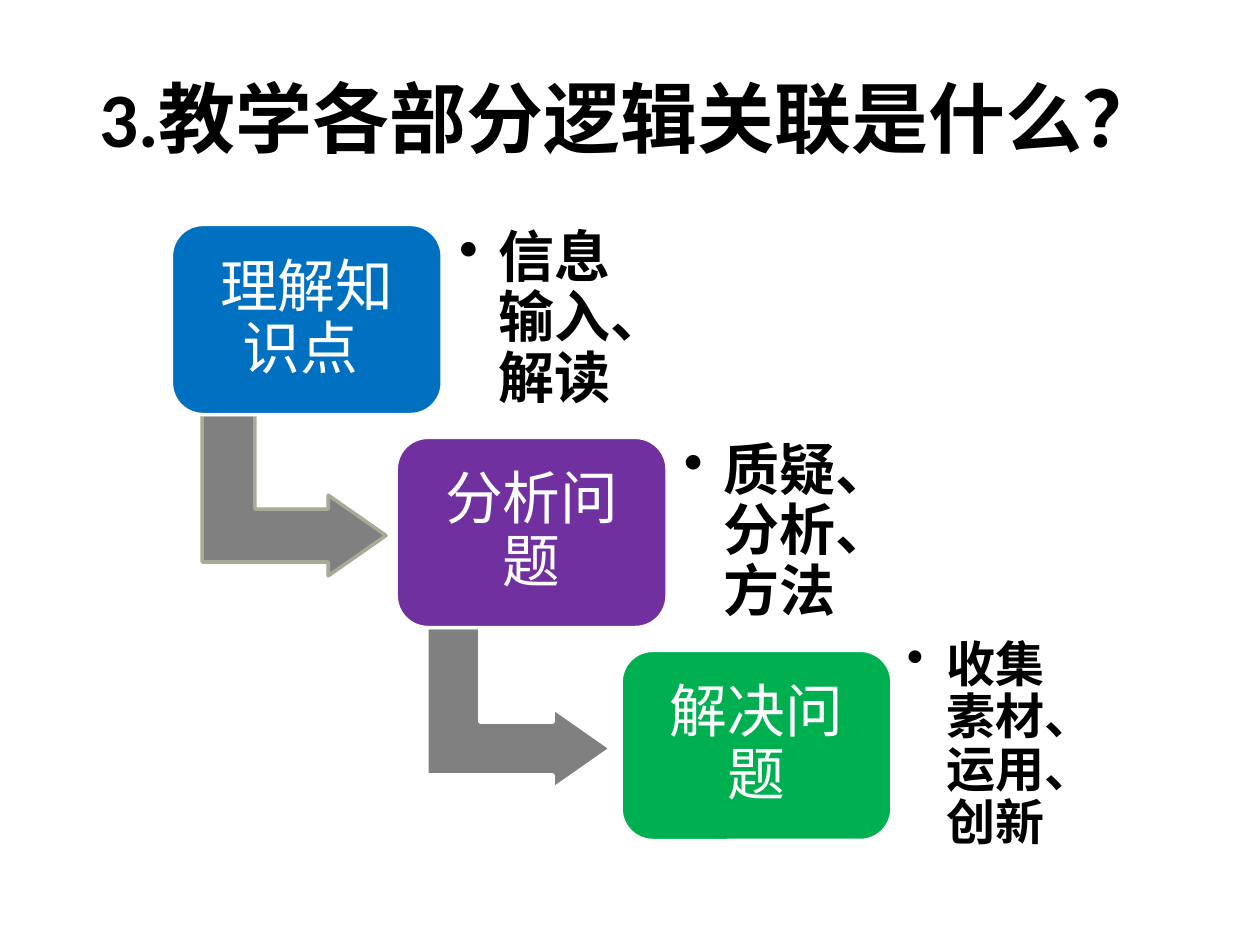
from dataclasses import dataclass

from lxml import etree
from pptx import Presentation
from pptx.dml.color import RGBColor
from pptx.enum.shapes import MSO_SHAPE
from pptx.enum.text import MSO_ANCHOR, PP_ALIGN
from pptx.oxml.ns import qn
from pptx.util import Pt

ROUNDED = MSO_SHAPE.ROUNDED_RECTANGLE
BENT_ARROW = MSO_SHAPE.BENT_UP_ARROW
MIDDLE = MSO_ANCHOR.MIDDLE
CENTER, LEFT = PP_ALIGN.CENTER, PP_ALIGN.LEFT

FONT = "Calibri"
COLORS = {
    "black": "000000",
    "white": "FFFFFF",
    "blue": "0070C0",
    "purple": "7030A0",
    "green": "00B050",
    "arrow": "808080",
    "arrow_edge": "A7AA95",
}

# Staircase geometry, in points
FIRST_X, FIRST_Y = 97.9, 128.2
STEP_X, STEP_Y = 128.5, 121.7
BOX_W, BOX_H = 154.8, 108.7
DETAIL_DY, DETAIL_W, DETAIL_H = 10.5, 113, 87.8
ARROW_DX, ARROW_DY, ARROW_W, ARROW_H = 24, 102.2, 92.2, 105.1
INDENT = 22.5


@dataclass
class Step:
    title: str
    color: str
    detail: str
    detail_size: float
    detail_margin: float
    arrow_edge: str = ""  # empty: no arrow to a next step


STEPS = [
    Step("理解知识点 ", "blue", "信息输入、解读", 32, 9.6, "arrow_edge"),
    Step("分析问题", "purple", "质疑、分析、方法", 32, 9.6, "white"),
    Step("解决问题", "green", "收集素材、运用、创新", 28, 8.5),
]


def rgb(name: str) -> RGBColor:
    return RGBColor.from_string(COLORS[name])


def set_text(s, text: str, size: float, color: str, bold: bool, align,
             margin: float, spacing: float = 0.9):
    """Fill a shape with one vertically centred paragraph and return it."""
    tf = s.text_frame
    tf.text = text
    tf.word_wrap = True
    tf.vertical_anchor = MIDDLE
    tf.margin_left = tf.margin_right = Pt(margin)
    tf.margin_top = tf.margin_bottom = Pt(margin)
    p = tf.paragraphs[0]
    p.alignment = align
    p.line_spacing = spacing
    r = p.runs[0]
    r.font.name = FONT
    r.font.size = Pt(size)
    r.font.bold = bold
    r.font.color.rgb = rgb(color)
    return p


def add_block(slide, kind, x: float, y: float, w: float, h: float,
              fill: str, edge: str):
    s = slide.shapes.add_shape(kind, Pt(x), Pt(y), Pt(w), Pt(h))
    s.shadow.inherit = False
    s.fill.solid()
    s.fill.fore_color.rgb = rgb(fill)
    s.line.color.rgb = rgb(edge)
    s.line.width = Pt(2)
    return s


def add_bullet(p) -> None:
    pPr = p._p.get_or_add_pPr()
    pPr.set("marL", str(Pt(INDENT)))
    pPr.set("indent", str(-Pt(INDENT)))
    etree.SubElement(pPr, qn("a:buChar")).set("char", "•")


def add_step(slide, step: Step, x: float, y: float) -> None:
    # Arrow to the next step, behind the box
    if step.arrow_edge:
        s = add_block(slide, BENT_ARROW, x + ARROW_DX, y + ARROW_DY,
                      ARROW_W, ARROW_H, "arrow", step.arrow_edge)
        s.rotation = 90
        for i, value in enumerate((0.328, 0.25, 0.358)):
            s.adjustments[i] = value

    # Coloured box with the step name
    s = add_block(slide, ROUNDED, x, y, BOX_W, BOX_H, step.color, "white")
    s.adjustments[0] = 0.167
    set_text(s, step.title, 33, "white", False, CENTER, 15)

    # Bulleted detail to its right
    s = slide.shapes.add_textbox(Pt(x + BOX_W), Pt(y + DETAIL_DY),
                                 Pt(DETAIL_W), Pt(DETAIL_H))
    p = set_text(s, step.detail, step.detail_size, "black", True, LEFT,
                 step.detail_margin)
    add_bullet(p)


def main() -> None:
    prs = Presentation()
    prs.slide_width, prs.slide_height = Pt(720), Pt(540)
    slide = prs.slides.add_slide(prs.slide_layouts[6])

    # Title
    s = slide.shapes.add_textbox(Pt(36), Pt(21.6), Pt(648), Pt(90))
    set_text(s, "3.教学各部分逻辑关联是什么？", 44, "black", True, CENTER, 5, 1.0)

    # Descending steps
    for i, step in enumerate(STEPS):
        add_step(slide, step, FIRST_X + i * STEP_X, FIRST_Y + i * STEP_Y)

    prs.save("out.pptx")


if __name__ == "__main__":
    main()
